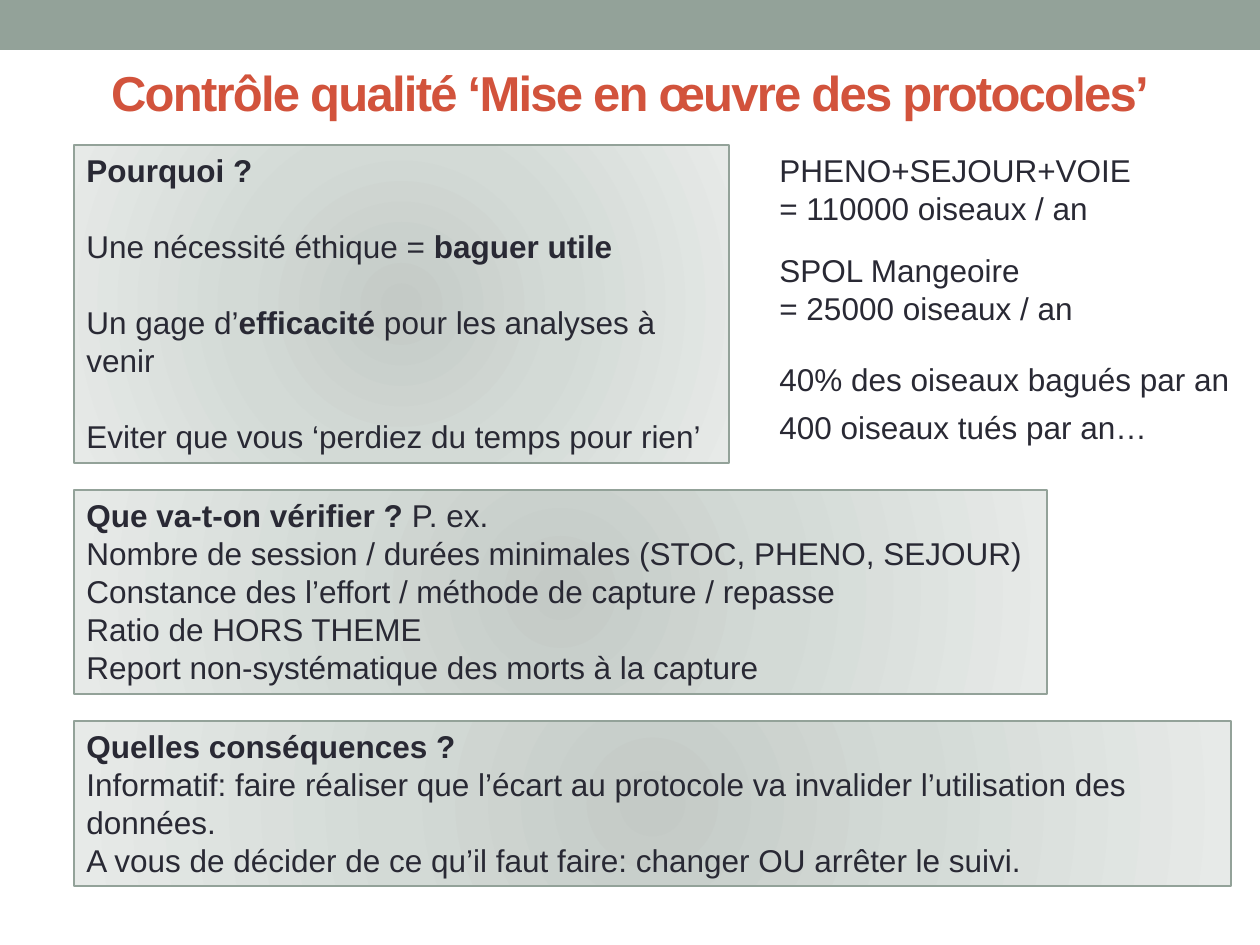
from dataclasses import dataclass

from lxml import etree
from pptx import Presentation
from pptx import util as u
from pptx.dml.color import RGBColor
from pptx.enum import shapes, text
from pptx.oxml.ns import qn

PX_PER_INCH = 126


@dataclass(frozen=True)
class Theme:
    font: str = "Arial"
    ink: str = "292934"
    heading: str = "D2533C"
    sage: str = "93A299"
    glow: tuple = ((0, "C4CAC6"), (45, "D3DAD6"), (100, "E7EAE8"))
    title_size: int = 28
    body_size: int = 18
    body_line: float = 21.7


@dataclass(frozen=True)
class Block:
    """Paragraphs in a box, in px; *asterisks* enclose bold words."""
    left: int
    top: int
    width: int
    height: int
    lines: tuple[str, ...]
    gap: float = 0


THEME = Theme()
PANEL_LEFT, FIGURE_LEFT = 74, 767

PANELS = (
    Block(PANEL_LEFT, 145, 655, 318, (
        "*Pourquoi ?*",
        "Une nécessité éthique = *baguer utile*",
        "Un gage d’*efficacité* pour les analyses à venir",
        "Eviter que vous ‘perdiez du temps pour rien’",
    ), gap=THEME.body_line),
    Block(PANEL_LEFT, 490, 973, 204, (
        "*Que va-t-on vérifier ? *P. ex.",
        "Nombre de session / durées minimales (STOC, PHENO, SEJOUR)",
        "Constance des l’effort / méthode de capture / repasse",
        "Ratio de HORS THEME",
        "Report non-systématique des morts à la capture",
    )),
    Block(PANEL_LEFT, 721, 1157, 165, (
        "*Quelles conséquences ?*",
        "Informatif: faire réaliser que l’écart au protocole va invalider "
        "l’utilisation des données.",
        "A vous de décider de ce qu’il faut faire: changer OU arrêter le suivi.",
    )),
)

FIGURES = (
    Block(FIGURE_LEFT, 145, 464, 89, ("PHENO+SEJOUR+VOIE", "= 110000 oiseaux / an")),
    Block(FIGURE_LEFT, 245, 464, 89, ("SPOL Mangeoire", "= 25000 oiseaux / an")),
    Block(FIGURE_LEFT, 354, 493, 50, ("40% des oiseaux bagués par an",)),
    Block(FIGURE_LEFT, 402, 493, 50, ("400 oiseaux tués par an…",)),
)


def px(length: int) -> int:
    return round(length * u.Inches(1) / PX_PER_INCH)


def place(block: Block) -> tuple[int, ...]:
    return tuple(map(px, (block.left, block.top, block.width, block.height)))


def write(shape, lines: tuple[str, ...], *, size: int = THEME.body_size,
          color: str = THEME.ink, line: float | None = THEME.body_line,
          gap: float = 0, align=text.PP_ALIGN.LEFT,
          anchor=text.MSO_ANCHOR.TOP, tracking: float = 0) -> None:
    frame = shape.text_frame
    frame.word_wrap = True
    frame.vertical_anchor = anchor
    for index, content in enumerate(lines):
        paragraph = frame.add_paragraph() if index else frame.paragraphs[0]
        paragraph.alignment = align
        if line:
            paragraph.line_spacing = u.Pt(line)
        if index and gap:
            paragraph.space_before = u.Pt(gap)
        for part, words in enumerate(content.split("*")):
            if not words:
                continue
            run = paragraph.add_run()
            run.text = words
            run.font.name = THEME.font
            run.font.size = u.Pt(size)
            run.font.bold = part % 2 == 1
            run.font.color.rgb = RGBColor.from_string(color)
            if tracking:
                run.font._element.set("spc", str(round(tracking * 100)))


def add_box(slide, block: Block):
    box = slide.shapes.add_shape(shapes.MSO_SHAPE.RECTANGLE, *place(block))
    box.shadow.inherit = False
    return box


def glow_fill(box) -> None:
    """Radial gradient spreading from the centre of the box."""
    box.fill.gradient()
    gradient = box._element.spPr.find(qn("a:gradFill"))
    for child in list(gradient):
        gradient.remove(child)
    stops = etree.SubElement(gradient, qn("a:gsLst"))
    for position, color in THEME.glow:
        stop = etree.SubElement(stops, qn("a:gs"), pos=str(position * 1000))
        etree.SubElement(stop, qn("a:srgbClr"), val=color)
    circle = etree.SubElement(gradient, qn("a:path"), path="circle")
    etree.SubElement(circle, qn("a:fillToRect"), {side: "100000" for side in "ltrb"})


def add_panel(slide, block: Block) -> None:
    panel = add_box(slide, block)
    glow_fill(panel)
    panel.line.color.rgb = RGBColor.from_string(THEME.sage)
    panel.line.width = u.Pt(0.75)
    write(panel, block.lines, gap=block.gap)


def add_text(slide, block: Block, **style) -> None:
    write(slide.shapes.add_textbox(*place(block)), block.lines, **style)


def main() -> None:
    deck = Presentation()
    deck.slide_width, deck.slide_height = u.Inches(10), u.Inches(7.5)
    slide = deck.slides.add_slide(deck.slide_layouts[6])

    # Top band and title
    band = add_box(slide, Block(0, 0, 1260, 50, ()))
    band.fill.solid()
    band.fill.fore_color.rgb = RGBColor.from_string(THEME.sage)
    band.line.fill.background()
    title = Block(0, 38, 1260, 107, ("*Contrôle qualité ‘Mise en œuvre des protocoles’*",))
    add_text(slide, title, size=THEME.title_size, color=THEME.heading, line=None,
             align=text.PP_ALIGN.CENTER, anchor=text.MSO_ANCHOR.MIDDLE, tracking=-1)

    # Questions on the left, key figures on the right
    for panel in PANELS:
        add_panel(slide, panel)
    for figure in FIGURES:
        add_text(slide, figure)

    deck.save("out.pptx")


if __name__ == "__main__":
    main()
